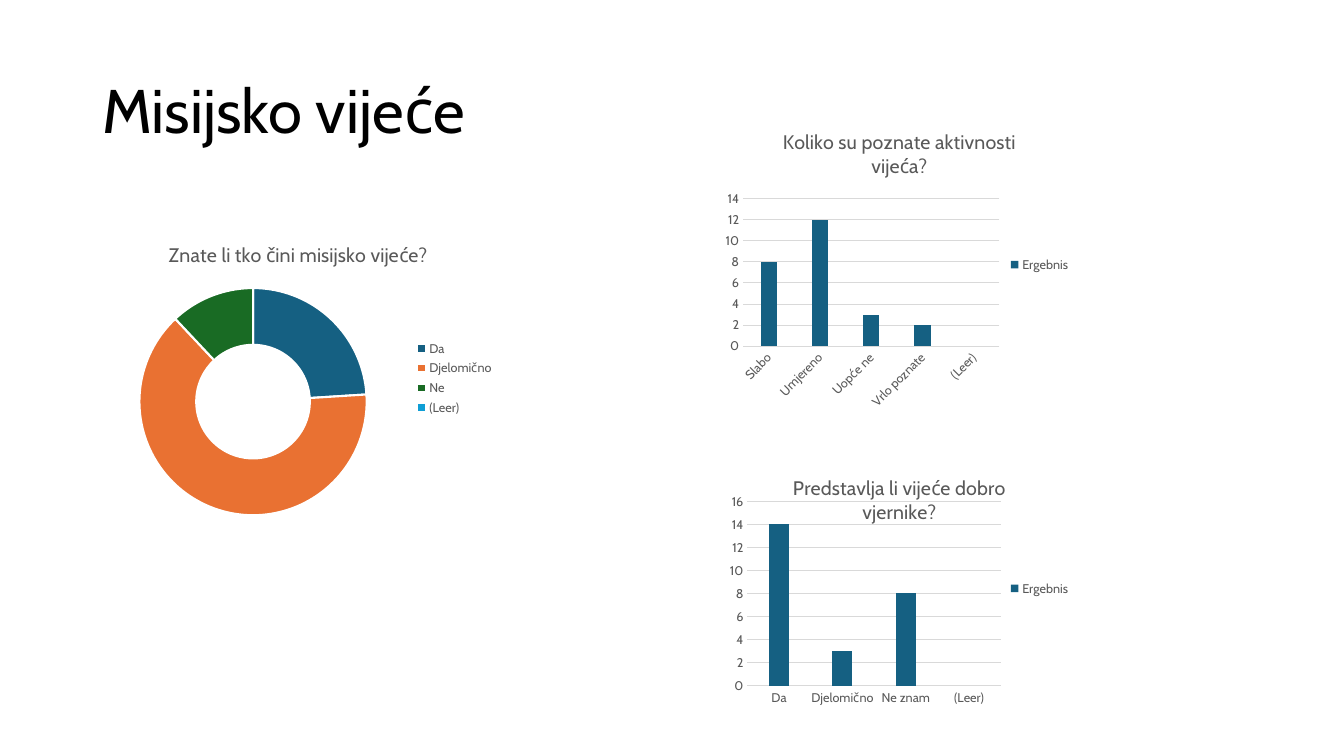
from dataclasses import dataclass

from pptx import Presentation
from pptx.chart.data import CategoryChartData
from pptx.dml.color import RGBColor
from pptx.enum.chart import XL_CHART_TYPE, XL_LEGEND_POSITION, XL_TICK_MARK
from pptx.enum.text import MSO_ANCHOR
from pptx.oxml import parse_xml
from pptx.oxml.ns import nsdecls
from pptx.util import Inches, Pt


@dataclass(frozen=True)
class Theme:
    font: str = "Cabin"
    black: str = "000000"
    white: str = "FFFFFF"
    grey: str = "595959"
    rule: str = "D9D9D9"
    accents: tuple = ("156082", "E97132", "196B24", "0F9ED5")
    title_size: int = 44
    chart_title_size: int = 14
    label_size: int = 9


class SlideBuilder:
    """Places elements on a grid of 160 columns by 90 rows, 1/12 inch each."""

    def __init__(self, slide, theme):
        self.s = slide
        self.theme = theme

    def box(self, *cells):
        return [Inches(n / 12) for n in cells]

    def style_font(self, font, size, color):
        font.name = self.theme.font
        font.size = Pt(size)
        font.bold = False
        font.color.rgb = RGBColor.from_string(color)

    def style_fill(self, fmt, color):
        fmt.fill.solid()
        fmt.fill.fore_color.rgb = RGBColor.from_string(color)

    def style_line(self, line, color, width):
        line.color.rgb = RGBColor.from_string(color)
        line.width = Pt(width)

    def title(self, text, cells):
        tf = self.s.shapes.add_textbox(*self.box(*cells)).text_frame
        tf.word_wrap = True
        tf.vertical_anchor = MSO_ANCHOR.MIDDLE
        p = tf.paragraphs[0]
        p.text = text
        p.line_spacing = 0.9
        self.style_font(p.font, self.theme.title_size, self.theme.black)

    def chart(self, kind, title, series_name, values, cells):
        data = CategoryChartData()
        data.categories = list(values)
        data.add_series(series_name, list(values.values()))
        chart = self.s.shapes.add_chart(kind, *self.box(*cells), data).chart
        self.style_font(chart.font, self.theme.label_size, self.theme.grey)
        chart.has_title = True
        p = chart.chart_title.text_frame.paragraphs[0]
        p.text = title
        self.style_font(p.font, self.theme.chart_title_size, self.theme.grey)
        chart.has_legend = True
        chart.legend.position = XL_LEGEND_POSITION.RIGHT
        chart.legend.include_in_layout = False
        self.style_font(chart.legend.font, self.theme.label_size, self.theme.grey)
        return chart

    def doughnut(self, title, values, cells):
        chart = self.chart(XL_CHART_TYPE.DOUGHNUT, title, "Series 1", values, cells)
        plot = chart.plots[0]
        plot.vary_by_categories = True
        for i, color in enumerate(self.theme.accents):
            fmt = plot.series[0].points[i].format
            self.style_fill(fmt, color)
            self.style_line(fmt.line, self.theme.white, 1.5)
        for hole in chart.element.xpath(".//c:holeSize"):
            hole.set("val", "75")

    def columns(self, title, values, cells, plot_area=None):
        """Column chart; plot_area gives x, y, w, h as shares of the chart."""
        chart = self.chart(XL_CHART_TYPE.COLUMN_CLUSTERED, title, "Ergebnis", values, cells)
        plot = chart.plots[0]
        plot.vary_by_categories = False
        plot.gap_width = 219
        plot.overlap = -27
        self.style_fill(plot.series[0].format, self.theme.accents[0])
        for axis in (chart.category_axis, chart.value_axis):
            axis.major_tick_mark = axis.minor_tick_mark = XL_TICK_MARK.NONE
            self.style_font(axis.tick_labels.font, self.theme.label_size, self.theme.grey)
        self.style_line(chart.category_axis.format.line, self.theme.rule, 0.75)
        chart.value_axis.format.line.fill.background()
        chart.value_axis.has_major_gridlines = True
        self.style_line(chart.value_axis.major_gridlines.format.line, self.theme.rule, 0.75)
        # Automatic label rotation
        for body in chart.element.xpath(".//c:catAx/c:txPr/a:bodyPr"):
            body.set("rot", "-60000000")
        if plot_area:
            self.place_plot(chart, plot_area)

    def place_plot(self, chart, plot_area):
        sizes = "".join(f'<c:{tag} val="{v}"/>' for tag, v in zip("xywh", plot_area))
        layout = parse_xml(
            f'<c:layout {nsdecls("c")}><c:manualLayout><c:layoutTarget val="inner"/>'
            f'<c:xMode val="edge"/><c:yMode val="edge"/>{sizes}</c:manualLayout></c:layout>')
        area = chart.element.xpath(".//c:plotArea")[0]
        for old in area.xpath("./c:layout"):
            area.remove(old)
        area.insert(0, layout)


def main():
    prs = Presentation()
    prs.slide_width, prs.slide_height = Inches(13.33), Inches(7.5)
    slide = SlideBuilder(prs.slides.add_slide(prs.slide_layouts[6]), Theme())
    slide.title("Misijsko vijeće", (11, 4.8, 138, 17.4))
    slide.doughnut("Znate li tko čini misijsko vijeće?",
                   {"Da": 24, "Djelomično": 64, "Ne": 12, "(Leer)": None},
                   (11, 27, 49, 36))
    slide.columns("Predstavlja li vijeće dobro vjernike?",
                  {"Da": 14, "Djelomično": 3, "Ne znam": 8, "(Leer)": None},
                  (85.5, 54.8, 43.1, 30.5), plot_area=(0.08, 0.16, 0.7, 0.72))
    slide.columns("Koliko su poznate aktivnosti vijeća?",
                  {"Slabo": 8, "Umjereno": 12, "Uopće ne": 3, "Vrlo poznate": 2, "(Leer)": None},
                  (85.5, 13.5, 43.1, 36))
    prs.save("out.pptx")


if __name__ == "__main__":
    main()
